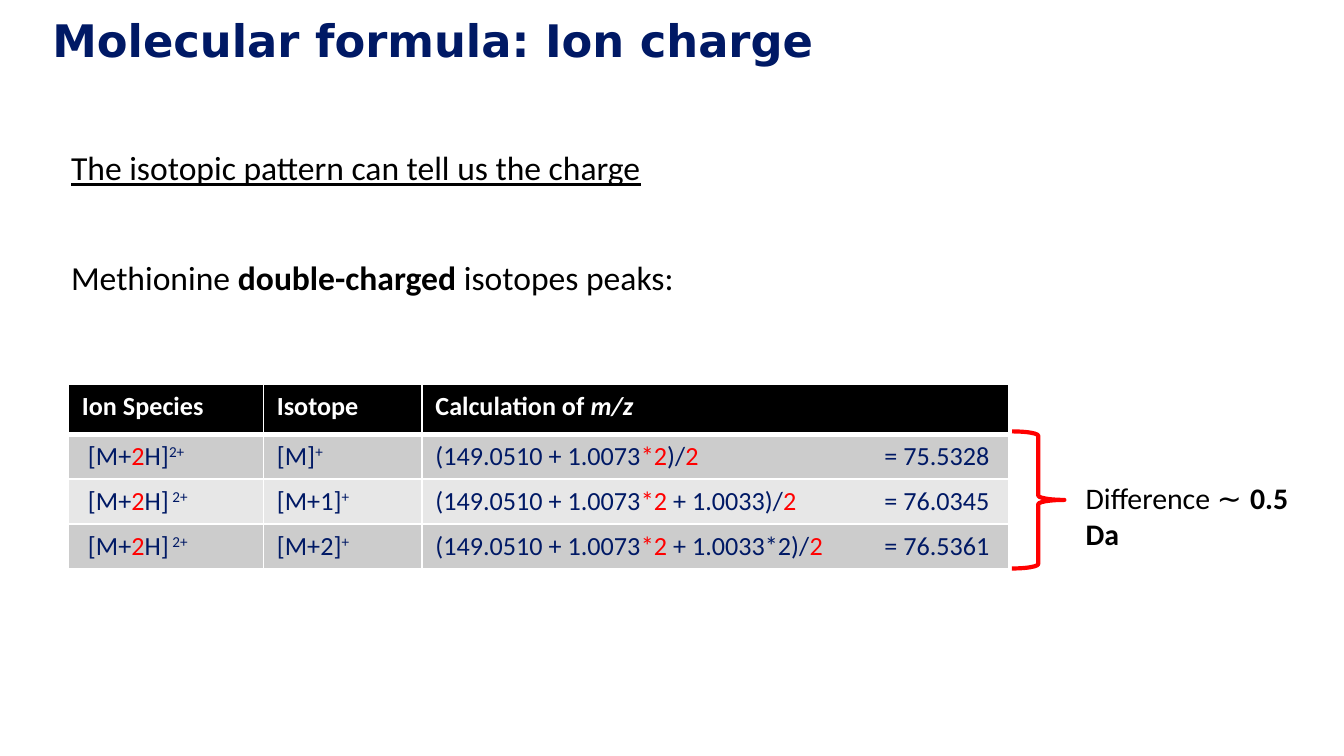
from lxml import etree
from pptx import Presentation
from pptx.dml.color import RGBColor
from pptx.enum.shapes import MSO_SHAPE as Shape
from pptx.enum.text import MSO_ANCHOR as Anchor
from pptx.oxml.ns import qn
from pptx.util import Inches, Pt

COLORS = {"navy": "001965", "red": "FF0000", "black": "000000",
          "white": "FFFFFF", "dark": "CCCCCC", "light": "E7E7E7"}

TITLE = "Molecular formula: Ion charge"
HEADING = [("The isotopic pattern can tell us the charge", "underline")]
INTRO = [("Methionine ", ""), ("double-charged", "bold"), (" isotopes peaks:", "")]
DIFFERENCE = [("Difference ", ""), ("∼ ", "symbol"), ("0.5 Da", "bold")]
HEADER = [[("Ion Species", "")], [("Isotope", "")],
          [("Calculation of ", ""), ("m/z", "italic")]]
PEAKS = [
    ("2+", "[M]", ")/", "75.5328"),
    (" 2+", "[M+1]", " + 1.0033)/", "76.0345"),
    (" 2+", "[M+2]", " + 1.0033*2)/", "76.5361"),
]
COLUMN_WIDTHS = [1.45, 1.18, 4.37]
ROW_HEIGHTS = [0.37, 0.33, 0.33, 0.33]
RESULT_TAB = 3.34


def color(name):
    return RGBColor.from_string(COLORS[name])


def peak_cells(charge, isotope, ending, mass):
    return [
        [(" [M+", ""), ("2", "red"), ("H]", ""), (charge, "super")],
        [(isotope, ""), ("+", "super")],
        [("(149.0510 + 1.0073", ""), ("*2", "red"), (ending, ""),
         ("2", "red"), (f"\t= {mass}", "")],
    ]


def write(paragraph, parts, size, ink, font="Calibri", bold=None):
    paragraph.font.size = Pt(size)
    paragraph.font.name = font
    paragraph.font.bold = bold
    paragraph.font.color.rgb = color(ink)
    for text, style in parts:
        run = paragraph.add_run()
        run.text = text
        if style in ("bold", "italic", "underline"):
            setattr(run.font, style, True)
        elif style == "red":
            run.font.color.rgb = color("red")
        elif style == "symbol":
            run.font.name = "Arial"
        elif style == "super":
            run.font._element.set("baseline", "30000")


def add_tab(paragraph, position):
    tabs = etree.SubElement(paragraph._p.get_or_add_pPr(), qn("a:tabLst"))
    etree.SubElement(tabs, qn("a:tab"), pos=str(Inches(position)), algn="l")


def add_borders(cell, row):
    widths = {"lnL": 1, "lnR": 1, "lnT": 3 if row == 1 else 1,
              "lnB": 3 if row == 0 else 1}
    for side, width in widths.items():
        line = etree.SubElement(cell._tc.get_or_add_tcPr(), qn(f"a:{side}"),
                                w=str(Pt(width)))
        fill = etree.SubElement(line, qn("a:solidFill"))
        etree.SubElement(fill, qn("a:srgbClr"), val=COLORS["white"])


def add_text_frame(slide, left, top, width, height):
    frame = slide.shapes.add_textbox(*map(Inches, (left, top, width, height))).text_frame
    frame.word_wrap = True
    return frame


def add_peak_table(slide):
    rows = [HEADER] + [peak_cells(*peak) for peak in PEAKS]
    table = slide.shapes.add_table(
        len(rows), len(COLUMN_WIDTHS), Inches(0.51), Inches(2.86),
        Inches(sum(COLUMN_WIDTHS)), Inches(sum(ROW_HEIGHTS))).table
    for column, width in zip(table.columns, COLUMN_WIDTHS):
        column.width = Inches(width)
    for r, (cells, height) in enumerate(zip(rows, ROW_HEIGHTS)):
        table.rows[r].height = Inches(height)
        for c, parts in enumerate(cells):
            cell = table.cell(r, c)
            add_borders(cell, r)
            cell.fill.solid()
            cell.fill.fore_color.rgb = color("black" if r == 0 else "dark" if r % 2 else "light")
            paragraph = cell.text_frame.paragraphs[0]
            if r and c == 2:
                add_tab(paragraph, RESULT_TAB)
            write(paragraph, parts, 14, "navy" if r else "white", bold=r == 0)


def main():
    deck = Presentation()
    deck.slide_width = Inches(10)
    deck.slide_height = deck.slide_width * 9 // 16
    slide = deck.slides.add_slide(deck.slide_layouts[6])

    title = add_text_frame(slide, 0, 0, 10, 0.59)
    title.margin_left = Inches(0.39)
    title.margin_top = title.margin_right = title.margin_bottom = 0
    title.vertical_anchor = Anchor.MIDDLE
    write(title.paragraphs[0], [(TITLE, "")], 24, "navy", "DejaVu Sans", True)

    body = add_text_frame(slide, 0.43, 1.08, 4.95, 1.3)
    heading, intro = body.paragraphs[0], body.add_paragraph()
    intro.space_before = Pt(39.5)
    for paragraph, parts in ((heading, HEADING), (intro, INTRO)):
        paragraph.line_spacing = 0.9
        write(paragraph, parts, 18, "black")

    add_peak_table(slide)

    brace = slide.shapes.add_shape(
        Shape.RIGHT_BRACE, Inches(7.53), Inches(3.21), Inches(0.39), Inches(1.02))
    brace.shadow.inherit = False
    brace.fill.background()
    brace.line.color.rgb = color("red")
    brace.line.width = Pt(2.25)

    difference = add_text_frame(slide, 7.98, 3.52, 1.97, 0.37)
    write(difference.paragraphs[0], DIFFERENCE, 16, "black")

    deck.save("out.pptx")


if __name__ == "__main__":
    main()
